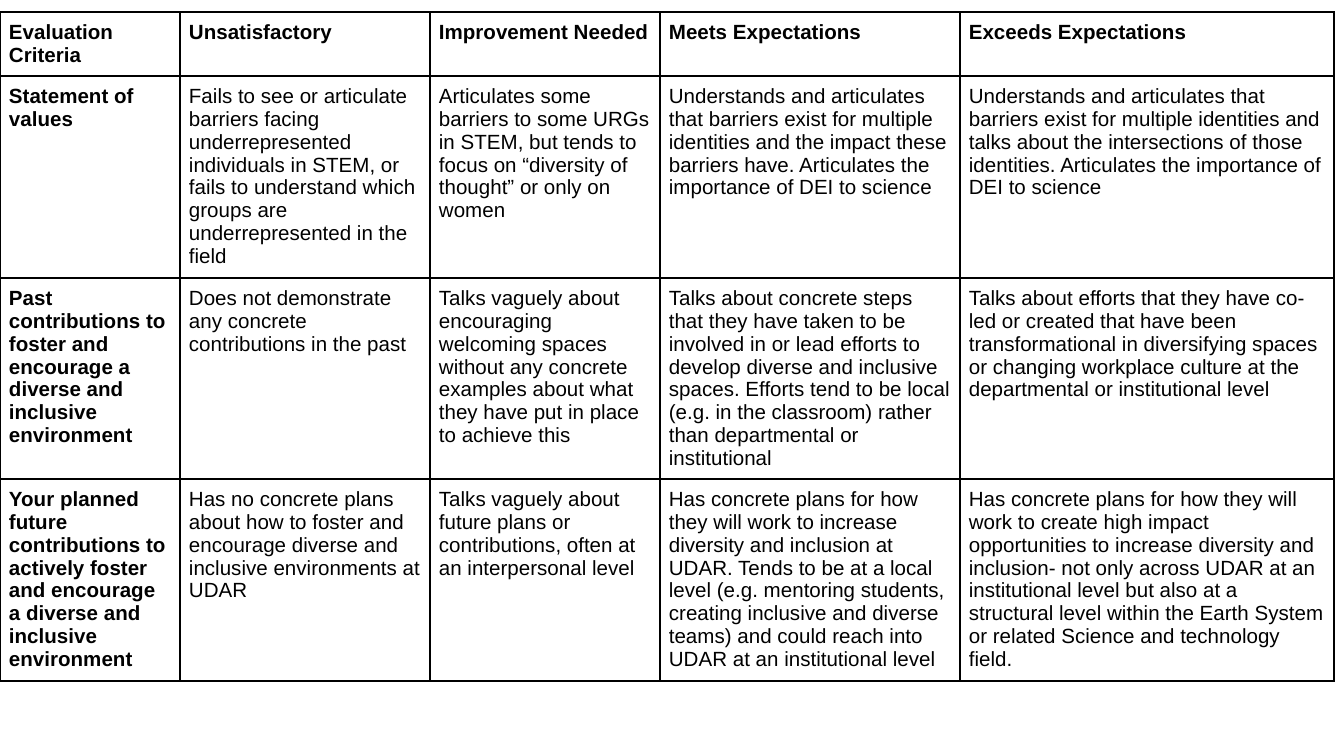
import pptx
import pptx.dml.color
import pptx.oxml
import pptx.oxml.ns
import pptx.util

# Content: the first row and the first column are headings
RUBRIC = [
    (
        "Evaluation Criteria",
        "Unsatisfactory",
        "Improvement Needed",
        "Meets Expectations",
        "Exceeds Expectations",
    ),
    (
        "Statement of values",
        "Fails to see or articulate barriers facing underrepresented individuals in STEM, "
        "or fails to understand which groups are underrepresented in the field",
        "Articulates some barriers to some URGs in STEM, but tends to focus on "
        "“diversity of thought” or only on women",
        "Understands and articulates that barriers exist for multiple identities and the "
        "impact these barriers have. Articulates the importance of DEI to science",
        "Understands and articulates that barriers exist for multiple identities and talks "
        "about the intersections of those identities. Articulates the importance of DEI to science",
    ),
    (
        "Past contributions to foster and encourage a diverse and inclusive environment",
        "Does not demonstrate any concrete contributions in the past",
        "Talks vaguely about encouraging welcoming spaces without any concrete examples "
        "about what they have put in place to achieve this",
        "Talks about concrete steps that they have taken to be involved in or lead efforts "
        "to develop diverse and inclusive spaces. Efforts tend to be local (e.g. in the "
        "classroom) rather than departmental or institutional",
        "Talks about efforts that they have co-led or created that have been "
        "transformational in diversifying spaces or changing workplace culture at the "
        "departmental or institutional level",
    ),
    (
        "Your planned future contributions to actively foster and encourage a diverse and "
        "inclusive environment",
        "Has no concrete plans about how to foster and encourage diverse and inclusive "
        "environments at UDAR",
        "Talks vaguely about future plans or contributions, often at an interpersonal level",
        "Has concrete plans for how they will work to increase diversity and inclusion at "
        "UDAR. Tends to be at a local level (e.g. mentoring students, creating inclusive and "
        "diverse teams) and could reach into UDAR at an institutional level",
        "Has concrete plans for how they will work to create high impact opportunities to "
        "increase diversity and inclusion- not only across UDAR at an institutional level but "
        "also at a structural level within the Earth System or related Science and technology field.",
    ),
]

# Lengths in px
PAGE_SIZE = (1344, 756)
TABLE_TOP = 12
COLUMN_WIDTHS = (180, 250, 230, 300, 374)
ROW_HEIGHTS = (64, 202, 201, 202)
CELL_INSET = 9

THEME = {
    "paper": "FFFFFF",
    "ink": "000000",
    "font": {"name": "Arial", "size": pptx.util.Pt(11)},
    "border": pptx.util.Pt(1),
}


def px(length):
    return pptx.util.Emu(round(length * 914400 / 134.4))


def add_borders(cell):
    properties = cell._tc.get_or_add_tcPr()
    for position, side in enumerate(("lnL", "lnR", "lnT", "lnB")):
        line = pptx.oxml.parse_xml(
            f'<a:{side} {pptx.oxml.ns.nsdecls("a")} w="{THEME["border"]}">'
            f'<a:solidFill><a:srgbClr val="{THEME["ink"]}"/></a:solidFill></a:{side}>'
        )
        properties.insert(position, line)


def fill_cell(cell, text, bold):
    for side in ("left", "right", "top", "bottom"):
        setattr(cell, f"margin_{side}", px(CELL_INSET))
    cell.fill.solid()
    cell.fill.fore_color.rgb = pptx.dml.color.RGBColor.from_string(THEME["paper"])
    span = cell.text_frame.paragraphs[0].add_run()
    span.text = text
    for name, value in {**THEME["font"], "bold": bold}.items():
        setattr(span.font, name, value)
    span.font.color.rgb = pptx.dml.color.RGBColor.from_string(THEME["ink"])
    add_borders(cell)


def main():
    deck = pptx.Presentation()
    deck.slide_width, deck.slide_height = map(px, PAGE_SIZE)
    page = deck.slides.add_slide(deck.slide_layouts.get_by_name("Blank"))

    # Rubric table
    table = page.shapes.add_table(
        len(ROW_HEIGHTS), len(COLUMN_WIDTHS),
        0, px(TABLE_TOP), px(sum(COLUMN_WIDTHS)), px(sum(ROW_HEIGHTS)),
    ).table
    table.first_row = table.horz_banding = False
    for column, width in zip(table.columns, COLUMN_WIDTHS):
        column.width = px(width)
    for row, height in zip(table.rows, ROW_HEIGHTS):
        row.height = px(height)

    # Cells
    for row_index, texts in enumerate(RUBRIC):
        for column_index, text in enumerate(texts):
            is_heading = row_index == 0 or column_index == 0
            fill_cell(table.cell(row_index, column_index), text, is_heading)

    deck.save("out.pptx")


if __name__ == "__main__":
    main()
